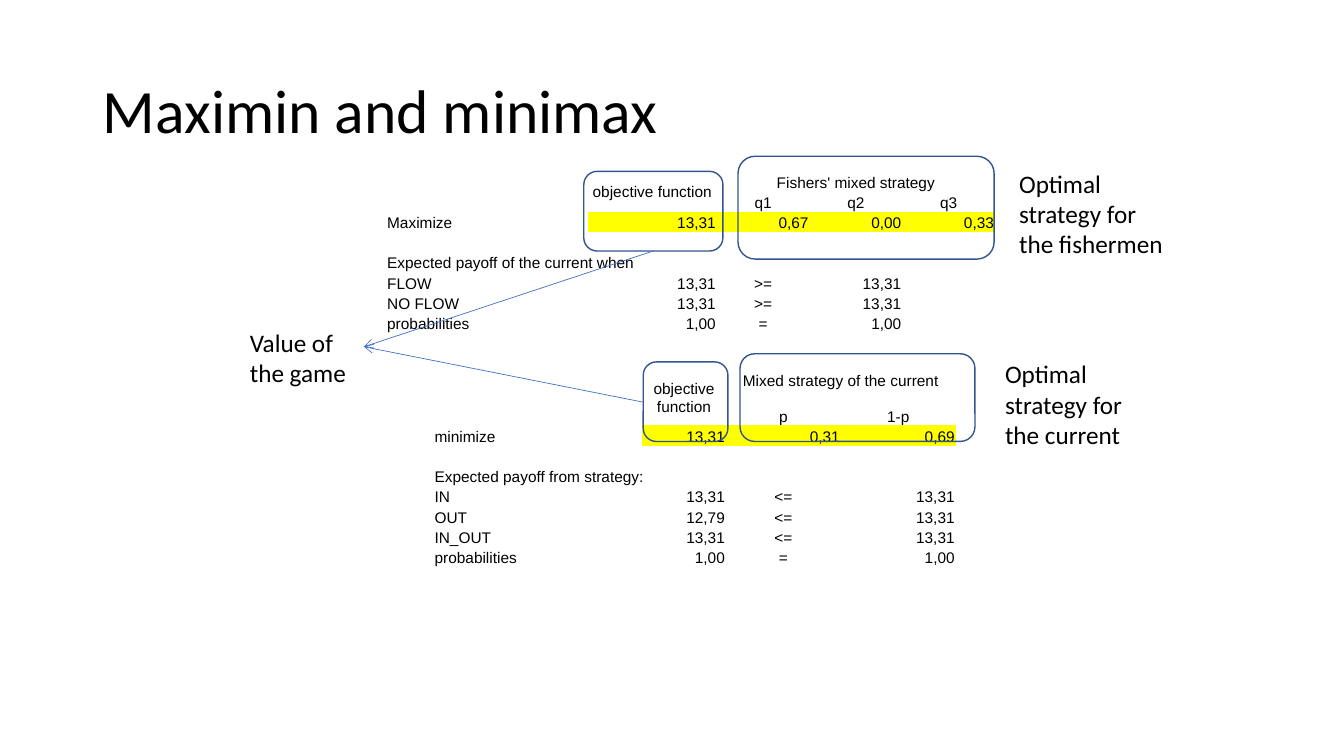
"""Build the slide on the maximin and minimax solutions of the game."""
from pptx import Presentation
from pptx import util as u
from pptx.dml.color import RGBColor
from pptx.enum import shapes, text
from pptx.oxml import ns
from lxml import etree

COLORS = {"ink": "000000", "mark": "FFFF00", "frame": "325491", "arrow": "4472C4"}
NO_GRID_STYLE = "{2D5ABB26-0587-4C30-8999-92F81FD0307C}"
TITLE = ("Maximin and minimax", (0.92, 0.4, 11.5, 1.45))
ROW_HEIGHT = 0.2
HIGHLIGHT_ROW = 2

FISHERS = {
    "at": (3.83, 1.7),
    "columns": (2, 1.28, 0.92, 0.92, 0.92),
    "merges": [((0, 1), (1, 1)), ((0, 2), (0, 4)), ((4, 0), (4, 1))],
    "rows": [
        ("", "objective function", "Fishers' mixed strategy", "", ""),
        ("", "", "q1", "q2", "q3"),
        ("Maximize", "13,31", "0,67", "0,00", "0,33"),
        ("", "", "", "", ""),
        ("Expected payoff of the current when", "", "", "", ""),
        ("FLOW", "13,31", ">=", "13,31", ""),
        ("NO FLOW", "13,31", ">=", "13,31", ""),
        ("probabilities", "1,00", "=", "1,00", ""),
    ],
}
CURRENT = {
    "at": (4.3, 3.67),
    "columns": (2.07, 0.83, 1.14, 1.14),
    "merges": [((0, 1), (1, 1)), ((0, 2), (0, 3)), ((4, 0), (4, 1))],
    "rows": [
        ("", "objective function", "Mixed strategy of the current", ""),
        ("", "", "p", "1-p"),
        ("minimize", "13,31", "0,31", "0,69"),
        ("", "", "", ""),
        ("Expected payoff from strategy:", "", "", ""),
        ("IN", "13,31", "<=", "13,31"),
        ("OUT", "12,79", "<=", "13,31"),
        ("IN_OUT", "13,31", "<=", "13,31"),
        ("probabilities", "1,00", "=", "1,00"),
    ],
}
FRAMES = [
    (7.32, 1.55, 2.54, 1.02),
    (7.34, 3.51, 2.33, 0.87),
    (5.79, 1.7, 1.38, 0.79),
    (6.38, 3.59, 0.84, 0.79),
]
NOTES = [
    ("Optimal strategy for the fishermen", (10.01, 1.62, 1.66, 1.01)),
    ("Optimal strategy for the current", (9.87, 3.51, 1.53, 1.01)),
    ("Value of the game", (2.38, 3.2, 1.38, 0.71)),
]
ARROW_TARGET = (3.61, 3.44)
ARROW_STARTS = [(6.48, 2.49), (6.38, 3.99)]


def color(name):
    return RGBColor.from_string(COLORS[name])


def inches(lengths):
    return [u.Inches(length) for length in lengths]


def style(paragraph, font, size):
    for span in paragraph.runs:
        span.font.name = font
        span.font.size = u.Pt(size)
        span.font.color.rgb = color("ink")


def cell_alignment(row, column, words):
    if column == 0:
        return text.PP_ALIGN.LEFT
    if row < HIGHLIGHT_ROW or words in (">=", "<=", "="):
        return text.PP_ALIGN.CENTER
    return text.PP_ALIGN.RIGHT


def fill_cell(cell, row, column, words):
    cell.margin_left = cell.margin_right = cell.margin_top = u.Inches(0.01)
    cell.margin_bottom = 0
    objective = (row, column) == (0, 1)
    cell.vertical_anchor = text.MSO_ANCHOR.MIDDLE if objective else text.MSO_ANCHOR.BOTTOM
    paragraph = cell.text_frame.paragraphs[0]
    if words:
        paragraph.text = words
        paragraph.alignment = cell_alignment(row, column, words)
        style(paragraph, "Arial", 11)
    else:
        paragraph._p.get_or_add_endParaRPr().set("sz", "1100")
    if row == HIGHLIGHT_ROW and column > 0:
        cell.fill.solid()
        cell.fill.fore_color.rgb = color("mark")
    else:
        cell.fill.background()


def add_payoffs(page, payoffs):
    rows, columns = payoffs["rows"], payoffs["columns"]
    size = (sum(columns), ROW_HEIGHT * len(rows))
    table = page.shapes.add_table(
        len(rows), len(columns), *inches(payoffs["at"] + size)).table
    table.first_row = table.horz_banding = False
    table._tbl.tblPr.find(ns.qn("a:tableStyleId")).text = NO_GRID_STYLE
    for column, width in zip(table.columns, columns):
        column.width = u.Inches(width)
    for row, entries in enumerate(rows):
        table.rows[row].height = u.Inches(ROW_HEIGHT)
        for column, words in enumerate(entries):
            fill_cell(table.cell(row, column), row, column, words)
    for first, last in payoffs["merges"]:
        table.cell(*first).merge(table.cell(*last))


def add_frame(page, place):
    frame = page.shapes.add_shape(shapes.MSO_SHAPE.ROUNDED_RECTANGLE, *inches(place))
    frame.shadow.inherit = False
    frame.fill.background()
    frame.line.color.rgb = color("frame")
    frame.line.width = u.Pt(1)


def add_arrow(page, start):
    arrow = page.shapes.add_connector(
        shapes.MSO_CONNECTOR.STRAIGHT, *inches(start + ARROW_TARGET))
    arrow.line.color.rgb = color("arrow")
    arrow.line.width = u.Pt(0.5)
    etree.SubElement(arrow.line._get_or_add_ln(), ns.qn("a:tailEnd"), type="arrow")
    etree.SubElement(arrow._element.spPr, ns.qn("a:effectLst"))


def add_note(page, words, place):
    box = page.shapes.add_textbox(*inches(place))
    box.text_frame.word_wrap = True
    box.text_frame.auto_size = text.MSO_AUTO_SIZE.SHAPE_TO_FIT_TEXT
    box.text_frame.text = words
    style(box.text_frame.paragraphs[0], "Calibri", 18)


def add_title(page):
    words, place = TITLE
    title = page.shapes.title
    title.left, title.top, title.width, title.height = inches(place)
    title.text_frame.text = words
    title.text_frame.vertical_anchor = text.MSO_ANCHOR.MIDDLE
    paragraph = title.text_frame.paragraphs[0]
    paragraph.alignment = text.PP_ALIGN.LEFT
    paragraph.line_spacing = 0.9
    style(paragraph, "Calibri", 44)


def main():
    deck = Presentation()
    deck.slide_width, deck.slide_height = inches((13.33, 7.5))
    page = deck.slides.add_slide(deck.slide_layouts[5])
    add_title(page)
    for payoffs in (FISHERS, CURRENT):
        add_payoffs(page, payoffs)
    for place in FRAMES:
        add_frame(page, place)
    for start in ARROW_STARTS:
        add_arrow(page, start)
    for words, place in NOTES:
        add_note(page, words, place)
    deck.save("out.pptx")


if __name__ == "__main__":
    main()
